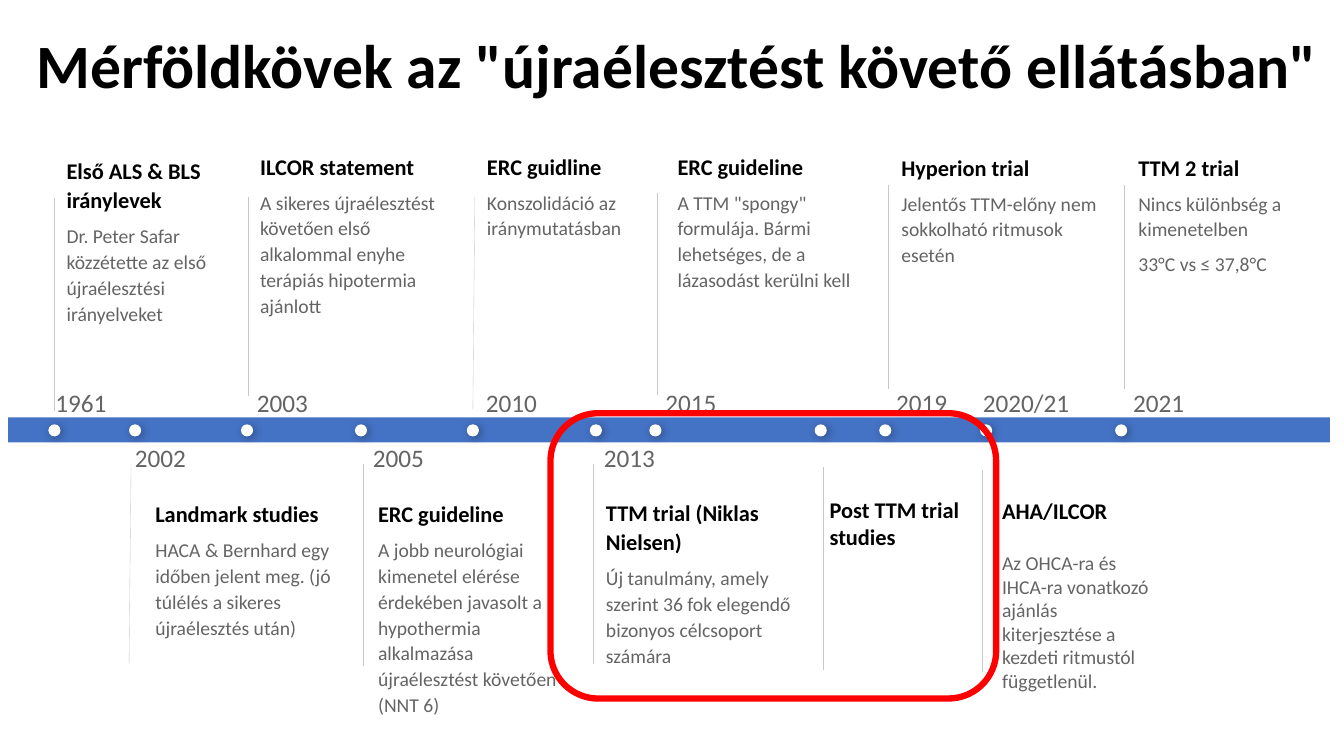
import pptx
import pptx.dml.color
import pptx.enum.shapes
import pptx.enum.text
import pptx.oxml
import pptx.oxml.ns
import pptx.util

Inches = pptx.util.Inches
Pt = pptx.util.Pt
SHAPES = pptx.enum.shapes.MSO_SHAPE
ANCHORS = pptx.enum.text.MSO_ANCHOR

FONT = "Calibri"
COLORS = {
    "title": "000000",
    "detail": "646464",
    "stem": "C8C8C8",
    "bar": "4472C4",
    "dot": "FFFFFF",
    "highlight": "FF0000",
}
DOT_SIZE = 0.12
DOT_TOP = 4.21
YEAR_TOP_ABOVE = 3.79
YEAR_TOP_BELOW = 4.34
CARD_INSETS = (0.12, 0, 0.2, 0)
PLAIN_INSETS = (0.1, 0.05, 0.1, 0.05)

# year, left of year, left of dot, stem (bottom x, bottom y, top x, top y),
# card (left, top, width, height), heading, details
ABOVE = [
    ("1961", 0.45, 0.48, (0.54, 4.08, 0.54, 1.96), (0.54, 1.53, 2.21, 1.83),
     "Első ALS & BLS iránylevek",
     ["Dr. Peter Safar közzétette az első újraélesztési irányelveket"]),
    ("2003", 2.45, 2.39, (2.46, 3.93, 2.46, 1.95), (2.46, 1.49, 2.14, 1.6),
     "ILCOR statement",
     ["A sikeres újraélesztést követően első alkalommal enyhe terápiás "
      "hipotermia ajánlott"]),
    ("2010", 4.72, 4.63, (4.69, 4.06, 4.71, 1.95), (4.71, 1.49, 2.21, 1.6),
     "ERC guidline", ["Konszolidáció az iránymutatásban"]),
    ("2015", 6.5, 6.44, (6.52, 3.92, 6.52, 1.91), (6.6, 1.49, 2.36, 1.6),
     "ERC guideline",
     ['A TTM "spongy" formulája. Bármi lehetséges, de a lázasodást '
      "kerülni kell"]),
    ("2019", 8.79, 8.72, (8.81, 3.86, 8.81, 1.84), (8.82, 1.5, 2.36, 1.6),
     "Hyperion trial",
     ["Jelentős TTM-előny nem sokkolható ritmusok esetén"]),
    ("2021", 11.14, 11.06, (11.15, 3.86, 11.15, 1.84), (11.17, 1.5, 1.92, 1.98),
     "TTM 2 trial",
     ["Nincs különbség a kimenetelben", "33°C vs ≤ 37,8°C"]),
]
BELOW = [
    ("2002", 1.24, 1.28, (1.28, 6.59, 1.3, 4.6), (1.42, 4.74, 2.21, 1.6),
     "Landmark studies",
     ["HACA & Bernhard egy időben jelent meg. (jó túlélés a sikeres "
      "újraélesztés után)"]),
    ("2005", 3.6, 3.52, (3.6, 6.61, 3.6, 4.6), (3.63, 5.51, 2.21, 1.6),
     "ERC guideline",
     ["A jobb neurológiai kimenetel elérése érdekében javasolt a hypothermia "
      "alkalmazása újraélesztést követően (NNT 6)"]),
    ("2013", 5.89, 5.85, (5.88, 6.59, 5.88, 4.6), (5.89, 5.02, 2.21, 1.6),
     "TTM trial (Niklas Nielsen)",
     ["Új tanulmány, amely szerint 36 fok elegendő bizonyos célcsoport "
      "számára"]),
]


def color(name):
    return pptx.dml.color.RGBColor.from_string(COLORS[name])


def add_box(page, place, insets=PLAIN_INSETS, anchor=ANCHORS.TOP):
    frame = page.shapes.add_textbox(*map(Inches, place)).text_frame
    frame.word_wrap = True
    frame.vertical_anchor = anchor
    (frame.margin_left, frame.margin_top,
     frame.margin_right, frame.margin_bottom) = map(Inches, insets)
    return frame


def add_para(frame, text, size, color_name, bold=False):
    """Write into the empty first paragraph, or append a new one."""
    first = frame.paragraphs[0]
    para = frame.add_paragraph() if first.runs else first
    span = para.add_run()
    span.text = text
    span.font.name = FONT
    span.font.size = Pt(size)
    span.font.bold = bold
    span.font.color.rgb = color(color_name)
    return para


def add_title(page, text):
    frame = add_box(page, (0.25, 0.35, 12.94, 0.75), (0, 0, 0, 0))
    para = add_para(frame, text, 44, "title", True)
    para.alignment = pptx.enum.text.PP_ALIGN.CENTER
    para.line_spacing = 0.9


def add_card(page, place, heading, details, anchor):
    frame = add_box(page, place, CARD_INSETS, anchor)
    add_para(frame, heading, 16, "title", True)
    for detail in details:
        add_para(frame, detail, 14, "detail")
    for para in frame.paragraphs:
        para.line_spacing = 1.1
        para.space_after = Pt(6)


def add_note(page, place, heading, detail=None):
    frame = add_box(page, place)
    add_para(frame, heading, 16, "title", True)
    if detail:
        add_para(frame, detail, 14, "detail").space_before = Pt(19.5)


def add_year(page, left, top, text, width=0.75):
    add_para(add_box(page, (left, top, width, 0.71)), text, 18, "detail")


def add_stem(page, ends):
    stem = page.shapes.add_connector(
        pptx.enum.shapes.MSO_CONNECTOR.STRAIGHT, *map(Inches, ends))
    stem.line.color.rgb = color("stem")
    stem.line.width = Pt(0.25)
    properties = stem._element.spPr
    properties.append(properties.makeelement(pptx.oxml.ns.qn("a:effectLst"), {}))


def add_filled(page, kind, place, color_name):
    shape = page.shapes.add_shape(kind, *map(Inches, place))
    shape.shadow.inherit = False
    shape.fill.solid()
    shape.fill.fore_color.rgb = color(color_name)
    shape.line.fill.background()
    return shape


def add_dot(page, left):
    """Add a white timeline marker with a soft shadow to the lower right."""
    dot = add_filled(page, SHAPES.OVAL, (left, DOT_TOP, DOT_SIZE, DOT_SIZE), "dot")
    effects = dot._element.spPr.find(pptx.oxml.ns.qn("a:effectLst"))
    effects.append(pptx.oxml.parse_xml(
        f'<a:outerShdw {pptx.oxml.ns.nsdecls("a")} blurRad="{Pt(6)}" '
        f'dist="{Pt(2)}" dir="2700000" algn="tl" rotWithShape="0">'
        '<a:srgbClr val="000000"><a:alpha val="30000"/></a:srgbClr>'
        "</a:outerShdw>"))


def add_highlight(page, place):
    frame = page.shapes.add_shape(SHAPES.ROUNDED_RECTANGLE, *map(Inches, place))
    frame.shadow.inherit = False
    frame.fill.background()
    frame.line.color.rgb = color("highlight")
    frame.line.width = Pt(4.5)


def add_milestones(page, milestones, year_top, anchor):
    for year, year_left, dot_left, stem, place, heading, details in milestones:
        add_stem(page, stem)
        add_dot(page, dot_left)
        add_card(page, place, heading, details, anchor)
        add_year(page, year_left, year_top, year)


def main():
    deck = pptx.Presentation()
    deck.slide_width = Inches(13.33)
    deck.slide_height = Inches(7.5)
    page = deck.slides.add_slide(deck.slide_layouts[6])

    add_title(page, 'Mérföldkövek az "újraélesztést követő ellátásban"')
    add_filled(page, SHAPES.RECTANGLE, (0.08, 4.14, 13.11, 0.25), "bar")
    add_milestones(page, ABOVE, YEAR_TOP_ABOVE, ANCHORS.TOP)
    add_milestones(page, BELOW, YEAR_TOP_BELOW, ANCHORS.BOTTOM)

    add_stem(page, (8.16, 6.65, 8.16, 4.63))
    add_dot(page, 8.08)
    add_note(page, (8.13, 4.87, 1.75, 0.64), "Post TTM trial studies")

    add_stem(page, (9.74, 6.67, 9.74, 4.66))
    add_dot(page, 9.72)
    add_note(page, (9.84, 4.88, 1.75, 2.05), "AHA/ILCOR",
             "Az OHCA-ra és IHCA-ra vonatkozó ajánlás kiterjesztése a kezdeti "
             "ritmustól függetlenül.")
    add_year(page, 9.65, YEAR_TOP_ABOVE, "2020/21", 1.06)

    add_highlight(page, (5.46, 4.1, 4.42, 2.83))
    deck.save("out.pptx")


if __name__ == "__main__":
    main()
